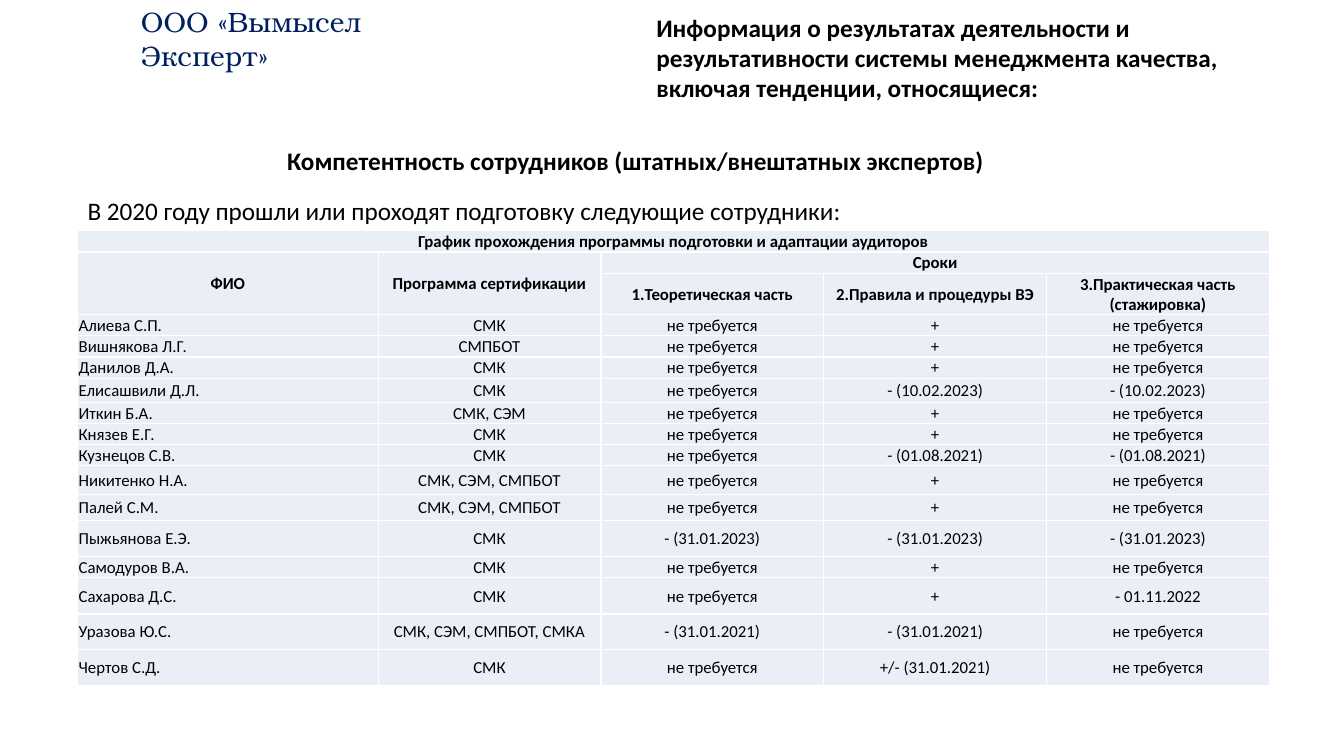
from lxml import etree
from pptx import Presentation
from pptx.dml.color import RGBColor
from pptx.enum import text
from pptx.oxml import ns
from pptx.util import Inches, Pt

BLACK = RGBColor(0x00, 0x00, 0x00)
NAVY = RGBColor(0x00, 0x20, 0x60)
PALE = RGBColor(0xEA, 0xEF, 0xF7)
BORDER = "FFFFFF"

NO = "не требуется"
COL_WIDTHS = [2.98] + [2.21] * 4
HEADINGS = [
    (0, 0, 0, 4, "График прохождения программы подготовки и адаптации аудиторов"),
    (1, 0, 2, 0, "ФИО"),
    (1, 1, 2, 1, "Программа сертификации"),
    (1, 2, 1, 4, "Сроки"),
    (2, 2, 2, 2, "1.Теоретическая часть"),
    (2, 3, 2, 3, "2.Правила и процедуры ВЭ"),
    (2, 4, 2, 4, "3.Практическая часть (стажировка)"),
]
HEADING_HEIGHTS = [0.19, 0.18, 0.2]
STAFF = [
    (0.18, "Алиева С.П.", "СМК", NO, "+", NO),
    (0.18, "Вишнякова Л.Г.", "СМПБОТ", NO, "+", NO),
    (0.18, "Данилов Д.А.", "СМК", NO, "+", NO),
    (0.24, "Елисашвили Д.Л.", "СМК", NO, "- (10.02.2023)", "- (10.02.2023)"),
    (0.18, "Иткин Б.А.", "СМК, СЭМ", NO, "+", NO),
    (0.18, "Князев Е.Г.", "СМК", NO, "+", NO),
    (0.2, "Кузнецов С.В.", "СМК", NO, "- (01.08.2021)", "- (01.08.2021)"),
    (0.28, "Никитенко Н.А.", "СМК, СЭМ, СМПБОТ", NO, "+", NO),
    (0.26, "Палей С.М.", "СМК, СЭМ, СМПБОТ", NO, "+", NO),
    (0.36, "Пыжьянова Е.Э.", "СМК", "- (31.01.2023)", "- (31.01.2023)", "- (31.01.2023)"),
    (0.18, "Самодуров В.А.", "СМК", NO, "+", NO),
    (0.36, "Сахарова Д.С.", "СМК", NO, "+", "- 01.11.2022"),
    (0.35, "Уразова Ю.С.", "СМК, СЭМ, СМПБОТ, СМКА", "- (31.01.2021)", "- (31.01.2021)", NO),
    (0.36, "Чертов С.Д.", "СМК", NO, "+/- (31.01.2021)", NO),
]


def write(tf, words, size, bold=False, color=BLACK, font="Calibri", align=text.PP_ALIGN.LEFT):
    """Put one formatted paragraph into a text frame."""
    tf.text = words
    p = tf.paragraphs[0]
    p.alignment = align
    for r in p.runs:
        r.font.name, r.font.size, r.font.bold = font, Pt(size), bold
        r.font.color.rgb = color


def add_title(s, x, y, w, h, words):
    """Move the title placeholder into the box and fill it."""
    sp = s.shapes.title
    sp.left, sp.top, sp.width, sp.height = map(Inches, (x, y, w, h))
    tf = sp.text_frame
    tf.word_wrap = True
    tf.auto_size = text.MSO_AUTO_SIZE.NONE
    tf.vertical_anchor = text.MSO_ANCHOR.TOP
    write(tf, words, 18, bold=True)


def add_text(s, x, y, w, h, words, size=18, wrap=True, **style):
    """Add a text box in the given box."""
    tf = s.shapes.add_textbox(*map(Inches, (x, y, w, h))).text_frame
    tf.word_wrap = wrap
    tf.auto_size = text.MSO_AUTO_SIZE.SHAPE_TO_FIT_TEXT
    write(tf, words, size, **style)


def style_cell(cell):
    """Give a cell its borders, fill, margins and anchor."""
    tc_pr = cell._tc.get_or_add_tcPr()
    for side in ("a:lnL", "a:lnR", "a:lnT", "a:lnB"):
        ln = etree.SubElement(tc_pr, ns.qn(side), w=str(Pt(1)))
        fill = etree.SubElement(ln, ns.qn("a:solidFill"))
        etree.SubElement(fill, ns.qn("a:srgbClr"), val=BORDER)
    cell.fill.solid()
    cell.fill.fore_color.rgb = PALE
    cell.margin_left = cell.margin_top = cell.margin_right = Inches(0.01)
    cell.margin_bottom = 0
    cell.vertical_anchor = text.MSO_ANCHOR.MIDDLE


def add_schedule(s, x, y, w, h):
    """Add the training schedule table in the given box."""
    heights = HEADING_HEIGHTS + [row[0] for row in STAFF]
    frame = s.shapes.add_table(len(heights), len(COL_WIDTHS), *map(Inches, (x, y, w, h)))
    table = frame.table
    table.first_row = table.horz_banding = False
    for col, width in zip(table.columns, COL_WIDTHS):
        col.width = Inches(width)
    for row, height in zip(table.rows, heights):
        row.height = Inches(height)
    for cell in table.iter_cells():
        style_cell(cell)
        cell.text_frame.paragraphs[0].font.size = Pt(12)
    for top, left, bottom, right, words in HEADINGS:
        cell = table.cell(top, left)
        if (top, left) != (bottom, right):
            cell.merge(table.cell(bottom, right))
        write(cell.text_frame, words, 12, bold=True, align=text.PP_ALIGN.CENTER)
    for i, (_, *values) in enumerate(STAFF, len(HEADING_HEIGHTS)):
        for j, words in enumerate(values):
            align = text.PP_ALIGN.CENTER if j else text.PP_ALIGN.LEFT
            write(table.cell(i, j).text_frame, words, 12, align=align)


def main():
    """Build the staff competence slide."""
    prs = Presentation()
    prs.slide_width, prs.slide_height = Inches(13.33), Inches(7.5)
    s = prs.slides.add_slide(prs.slide_layouts[5])
    add_text(s, 1.3, 0, 3.59, 0.44, "ООО «Вымысел Эксперт»", size=20, wrap=False,
             color=NAVY, font="TeX Gyre Bonum")
    add_title(s, 6.41, 0.07, 6.67, 1.01,
              "Информация о результатах деятельности и результативности системы "
              "менеджмента качества, включая тенденции, относящиеся:")
    add_text(s, 2.75, 1.39, 7.17, 0.4,
             "Компетентность сотрудников (штатных/внештатных экспертов)", bold=True)
    add_text(s, 0.77, 1.89, 11.81, 0.4,
             "В 2020 году прошли или проходят подготовку следующие сотрудники:")
    add_schedule(s, 0.77, 2.29, 11.81, 4.48)
    prs.save("out.pptx")


if __name__ == "__main__":
    main()
